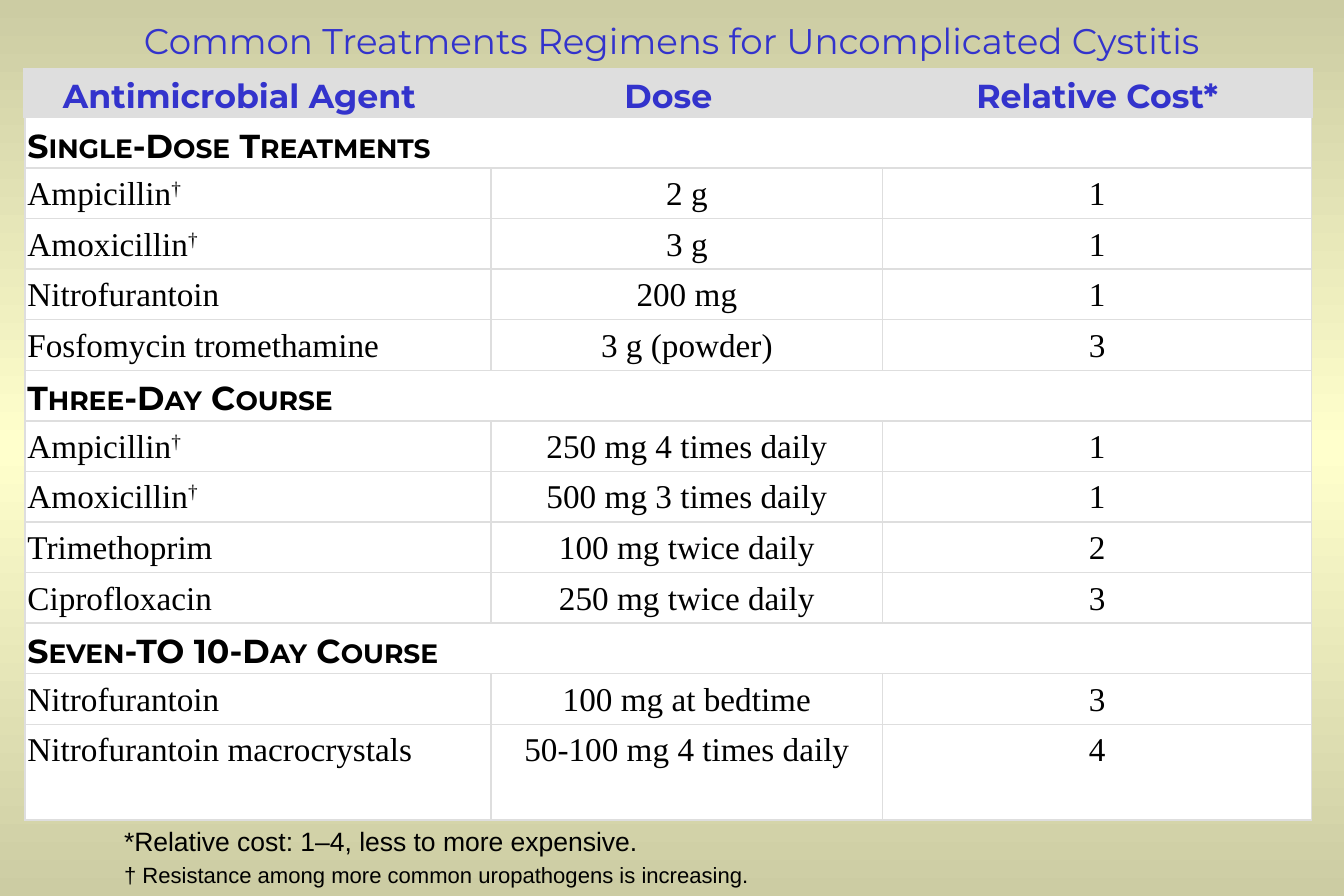
from copy import deepcopy
from dataclasses import dataclass
from itertools import groupby

from lxml import etree
from pptx import Presentation
from pptx import util as u
from pptx.dml.color import RGBColor
from pptx.enum import text as t
from pptx.oxml import ns


@dataclass(frozen=True)
class Theme:
    heading_font: str = "Montserrat"
    body_font: str = "Times New Roman"
    note_font: str = "Arial"
    blue: str = "3333CC"
    black: str = "000000"
    white: str = "FFFFFF"
    grey: str = "DEDEDE"
    edge: str = "CCCCA3"
    middle: str = "FFFFCC"
    title_size: float = 21.5
    table_size: float = 20
    note_size: float = 16
    raised_note_size: float = 23
    thin: float = 1
    thick: float = 2.25


THEME = Theme()
COLUMN_WIDTHS = [3.59, 0.31, 3.28, 3.59]
HEADER_HEIGHT, FIRST_SECTION_HEIGHT, ROW_HEIGHT, LAST_HEIGHT = 0.4, 0.38, 0.42, 0.8
HEADERS = ["Antimicrobial Agent", "Dose", "Relative Cost*"]
COURSES = {
    "Single-Dose Treatments": [
        ("Ampicillin†", "2 g", "1"),
        ("Amoxicillin†", "3 g", "1"),
        ("Nitrofurantoin", "200 mg", "1"),
        ("Fosfomycin tromethamine", "3 g (powder)", "3"),
    ],
    "Three-Day Course": [
        ("Ampicillin†", "250 mg 4 times daily", "1"),
        ("Amoxicillin†", "500 mg 3 times daily", "1"),
        ("Trimethoprim", "100 mg twice daily", "2"),
        ("Ciprofloxacin", "250 mg twice daily", "3"),
    ],
    "Seven-TO 10-Day Course": [
        ("Nitrofurantoin", "100 mg at bedtime", "3"),
        ("Nitrofurantoin macrocrystals", "50-100 mg 4 times daily", "4"),
    ],
}


def write_text(paragraph, content, *, font=THEME.body_font, size=THEME.table_size,
               color=THEME.black, bold=False, align=t.PP_ALIGN.LEFT, spacing=1.0,
               small_caps=False, raised=""):
    paragraph.alignment = align
    paragraph.line_spacing = spacing

    def effect(letter):
        return small_caps and letter.islower(), letter in raised

    for (small, lifted), letters in groupby(content, effect):
        run = paragraph.add_run()
        run.text = "".join(letters)
        run.font.name = font
        run.font.size = u.Pt(size)
        run.font.bold = bold
        run.font.color.rgb = RGBColor.from_string(color)
        properties = run._r.get_or_add_rPr()
        if small:
            properties.set("cap", "small")
        if lifted:
            properties.set("baseline", "30000")


def add_text_box(slide, left, top, width, height, anchor=t.MSO_ANCHOR.TOP):
    shape = slide.shapes.add_textbox(*map(u.Inches, (left, top, width, height)))
    shape.text_frame.word_wrap = True
    shape.text_frame.vertical_anchor = anchor
    return shape.text_frame


def set_background(slide):
    fill = slide.background.fill
    fill.gradient()
    fill.gradient_angle = 270
    colors = (THEME.edge, THEME.middle)
    for stop, color, position in zip(fill.gradient_stops, colors, (0, 0.5)):
        stop.color.rgb = RGBColor.from_string(color)
        stop.position = position
    stops = slide.element.find(".//" + ns.qn("a:gsLst"))
    last_stop = deepcopy(stops[0])
    last_stop.set("pos", "100000")
    stops.append(last_stop)


def set_borders(cell, widths):
    properties = cell._tc.get_or_add_tcPr()
    for index, side in enumerate("LRTB"):
        line = etree.Element(ns.qn(f"a:ln{side}"), w=str(u.Pt(widths[side])))
        fill = etree.SubElement(line, ns.qn("a:solidFill"))
        etree.SubElement(fill, ns.qn("a:srgbClr"), val=THEME.grey)
        properties.insert(index, line)


def format_cell(cell, fill, margin, widths):
    cell.fill.solid()
    cell.fill.fore_color.rgb = RGBColor.from_string(fill)
    cell.margin_left = cell.margin_right = u.Inches(margin)
    cell.margin_top = cell.margin_bottom = u.Inches(margin)
    set_borders(cell, widths)


def write_cell(table, row, first, last, content, **style):
    cell = table.cell(row, first)
    if last > first:
        cell.merge(table.cell(row, last))
    write_text(cell.text_frame.paragraphs[0], content, spacing=1.15, **style)
    return cell


def add_treatment_table(slide):
    row_count = 1 + sum(1 + len(drugs) for drugs in COURSES.values())
    heights = [HEADER_HEIGHT, FIRST_SECTION_HEIGHT]
    heights += [ROW_HEIGHT] * (row_count - 3) + [LAST_HEIGHT]
    frame = slide.shapes.add_table(
        row_count, len(COLUMN_WIDTHS), u.Inches(0.21), u.Inches(0.58),
        u.Inches(sum(COLUMN_WIDTHS)), u.Inches(sum(heights)))
    table = frame.table
    table.first_row = table.horz_banding = False
    for column, width in zip(table.columns, COLUMN_WIDTHS):
        column.width = u.Inches(width)
    for row, height in zip(table.rows, heights):
        row.height = u.Inches(height)

    last_column = len(COLUMN_WIDTHS) - 1
    for row in range(row_count):
        header = row == 0
        for column in range(len(COLUMN_WIDTHS)):
            widths = dict.fromkeys("LRTB", THEME.thin)
            if header:
                widths["T"] = THEME.thick
                if column == 0:
                    widths["L"] = THEME.thick
                if column == last_column:
                    widths["R"] = THEME.thick
            format_cell(table.cell(row, column), THEME.grey if header else THEME.white,
                        0.01 if header else 0.02, widths)

    center = t.PP_ALIGN.CENTER
    for (first, last), label in zip([(0, 0), (1, 2), (3, 3)], HEADERS):
        cell = write_cell(table, 0, first, last, label, font=THEME.heading_font,
                          color=THEME.blue, bold=True, align=center)
        cell.vertical_anchor = t.MSO_ANCHOR.BOTTOM

    row = 1
    for course, drugs in COURSES.items():
        write_cell(table, row, 0, last_column, course, font=THEME.heading_font,
                   bold=True, small_caps=True)
        for row, (agent, dose, cost) in enumerate(drugs, row + 1):
            write_cell(table, row, 0, 1, agent, raised="†")
            write_cell(table, row, 2, 2, dose, align=center)
            write_cell(table, row, 3, 3, cost, align=center)
        row += 1


def add_title(slide):
    frame = add_text_box(slide, 0, 0, 11.25, 0.67, t.MSO_ANCHOR.MIDDLE)
    write_text(frame.paragraphs[0], "Common Treatments Regimens for Uncomplicated Cystitis",
               font=THEME.heading_font, size=THEME.title_size, color=THEME.blue,
               align=t.PP_ALIGN.CENTER)


def add_footnotes(slide):
    frame = add_text_box(slide, 0.94, 6.86, 8.16, 1.14)
    write_text(frame.paragraphs[0], "*Relative cost: 1–4, less to more expensive.",
               font=THEME.note_font, size=THEME.note_size)
    resistance = "† Resistance among more common uropathogens is increasing."
    write_text(frame.add_paragraph(), resistance, font=THEME.note_font,
               size=THEME.raised_note_size, raised=resistance)


def main():
    presentation = Presentation()
    presentation.slide_width = u.Inches(11.25)
    presentation.slide_height = u.Inches(7.5)
    slide = presentation.slides.add_slide(presentation.slide_layouts[6])
    set_background(slide)
    add_title(slide)
    add_treatment_table(slide)
    add_footnotes(slide)
    presentation.save("out.pptx")


if __name__ == "__main__":
    main()
